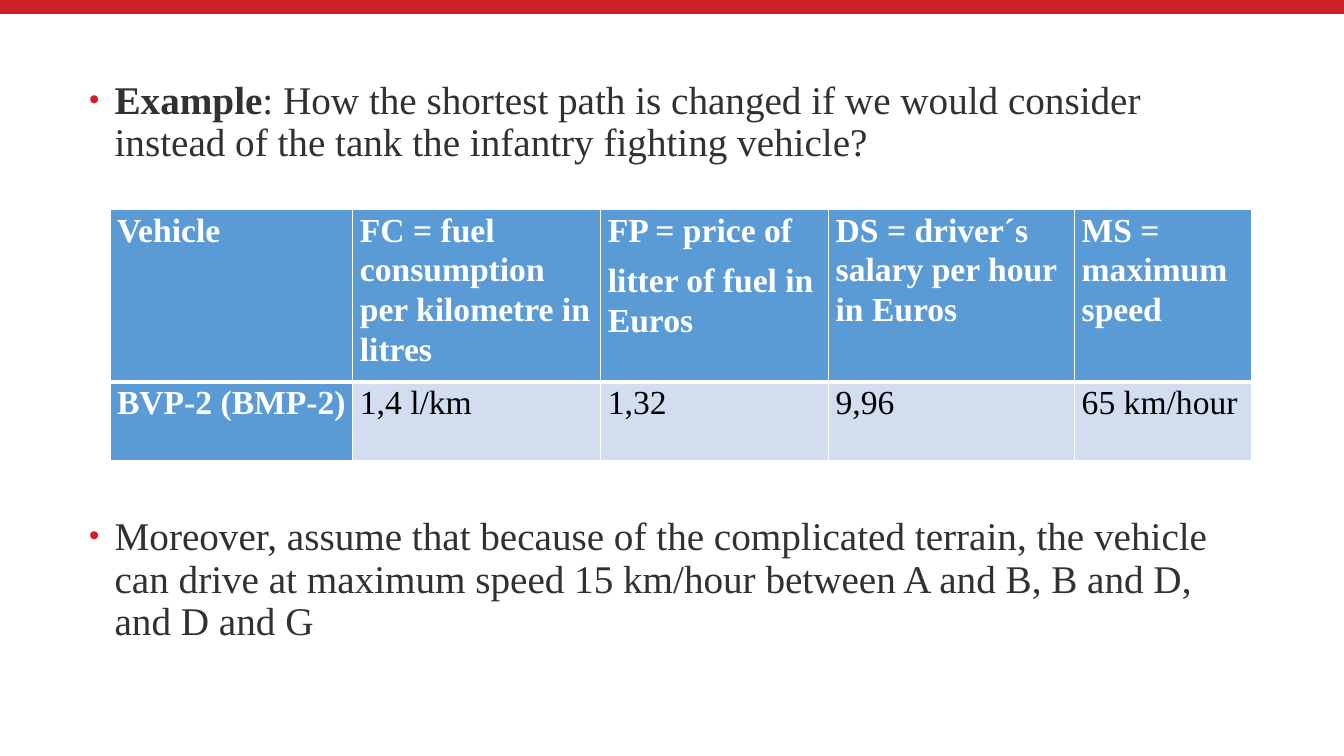
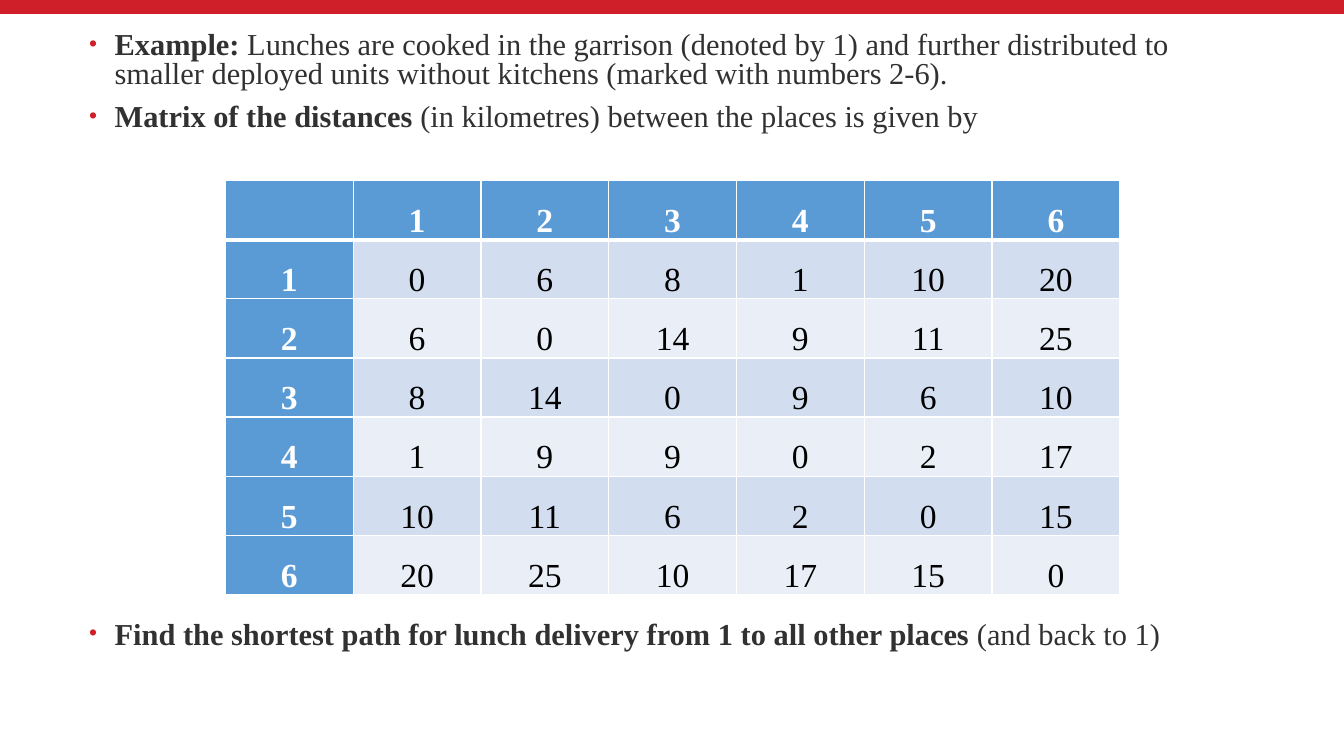
from lxml.etree import SubElement
from pptx import Presentation
from pptx.dml.color import RGBColor
from pptx.enum.shapes import MSO_SHAPE
from pptx.enum.text import MSO_ANCHOR, PP_ALIGN
from pptx.oxml.ns import qn
from pptx.util import Cm, Pt

RED = RGBColor(0xCF, 0x1F, 0x28)
DARK = RGBColor(0x31, 0x31, 0x31)
BLACK = RGBColor(0x00, 0x00, 0x00)
WHITE = RGBColor(0xFF, 0xFF, 0xFF)
BLUE = RGBColor(0x5B, 0x9B, 0xD5)
BAND_FILLS = (RGBColor(0xD2, 0xDE, 0xEF), RGBColor(0xEA, 0xEF, 0xF7))
FONT = "Times New Roman"
BLANK_LAYOUT = 6

VEHICLE_ROWS = [
    [
        "Vehicle",
        "FC = fuel consumption per kilometre in litres",
        "FP = price of\nlitter of fuel in Euros",
        "DS = driver´s salary per hour in Euros",
        "MS = maximum speed",
    ],
    ["BVP-2 (BMP-2)", "1,4 l/km", "1,32", "9,96", "65 km/hour"],
]
DISTANCES = [
    [0, 6, 8, 1, 10, 20],
    [6, 0, 14, 9, 11, 25],
    [8, 14, 0, 9, 6, 10],
    [1, 9, 9, 0, 2, 17],
    [10, 11, 6, 2, 0, 15],
    [20, 25, 10, 17, 15, 0],
]


def style_run(run, size, color, bold):
    run.font.name = FONT
    run.font.size = Pt(size)
    run.font.color.rgb = color
    run.font.bold = bold


def add_top_band(deck, page):
    band = page.shapes.add_shape(MSO_SHAPE.RECTANGLE, 0, 0, deck.slide_width, Cm(0.35))
    band.shadow.inherit = False
    band.fill.solid()
    band.fill.fore_color.rgb = RED
    band.line.fill.background()
    deck.slide_master.shapes.element.insert(2, band.element)


def add_bullet(para):
    properties = para._p.get_or_add_pPr()
    properties.set("marL", str(Cm(0.64)))
    properties.set("indent", str(-Cm(0.64)))
    color = SubElement(properties, qn("a:buClr"))
    SubElement(color, qn("a:srgbClr"), val=str(RED))
    SubElement(properties, qn("a:buSzPct"), val="75000")
    SubElement(properties, qn("a:buFont"), typeface="Arial")
    SubElement(properties, qn("a:buChar"), char="•")


def add_bullets(page, top, height, items, size, line_spacing):
    box = page.shapes.add_textbox(Cm(2), Cm(top), Cm(29.87), Cm(height))
    frame = box.text_frame
    frame.word_wrap = True
    for index, (bold_text, plain_text) in enumerate(items):
        para = frame.add_paragraph() if index else frame.paragraphs[0]
        add_bullet(para)
        para.line_spacing = line_spacing
        if index:
            para.space_before = Pt(10)
        for text, bold in ((bold_text, True), (plain_text, False)):
            if text:
                span = para.add_run()
                span.text = text
                style_run(span, size, DARK, bold)


def set_borders(cell, bottom_width):
    properties = cell._tc.get_or_add_tcPr()
    for side, width in (("L", 1), ("R", 1), ("T", 1), ("B", bottom_width)):
        line = SubElement(properties, qn(f"a:ln{side}"), w=str(Pt(width)))
        fill = SubElement(line, qn("a:solidFill"))
        SubElement(fill, qn("a:srgbClr"), val=str(WHITE))


def fill_cell(cell, text, row, column, margin, anchor, align):
    is_header = row == 0 or column == 0
    set_borders(cell, 3 if row == 0 else 1)
    cell.fill.solid()
    cell.fill.fore_color.rgb = BLUE if is_header else BAND_FILLS[(row - 1) % 2]
    cell.margin_left = cell.margin_right = Cm(margin)
    cell.margin_top = cell.margin_bottom = 0
    cell.vertical_anchor = anchor
    cell.text_frame.text = text
    for para in cell.text_frame.paragraphs:
        para.alignment = align
        para.line_spacing = 1.07
        para.space_after = Pt(8)
        for span in para.runs:
            style_run(span, 24, WHITE if is_header else BLACK, is_header)


def add_grid(page, left, top, widths, heights, rows, margin, anchor, align):
    frame = page.shapes.add_table(
        len(heights), len(widths), Cm(left), Cm(top), Cm(sum(widths)), Cm(sum(heights))
    )
    table = frame.table
    table.first_col = True
    for column, width in zip(table.columns, widths):
        column.width = Cm(width)
    for row, height in zip(table.rows, heights):
        row.height = Cm(height)
    for row, texts in enumerate(rows):
        for column, text in enumerate(texts):
            fill_cell(table.cell(row, column), text, row, column, margin, anchor, align)


def build_vehicle_page(page):
    question = (
        "Example",
        ": How the shortest path is changed if we would consider "
        "instead of the tank the infantry fighting vehicle?",
    )
    assumption = (
        "",
        "Moreover, assume that because of the complicated terrain, the vehicle "
        "can drive at maximum speed 15 km/hour between A and B, B and D, and D and G",
    )
    add_bullets(page, 1.9, 2.5, [question], 28, 0.9)
    add_grid(
        page, 2.77, 5.28, [6.12, 6.25, 5.74, 6.2, 4.47], [3.91, 1.98],
        VEHICLE_ROWS, 0.18, MSO_ANCHOR.TOP, PP_ALIGN.LEFT,
    )
    add_bullets(page, 12.9, 3.5, [assumption], 28, 0.9)


def build_distance_page(page):
    introduction = [
        (
            "Example: ",
            "Lunches are cooked in the garrison (denoted by 1) and further distributed "
            "to smaller deployed units without kitchens (marked with numbers 2-6).",
        ),
        ("Matrix of the distances ", "(in kilometres) between the places is given by"),
    ]
    task = (
        "Find the shortest path for lunch delivery from 1 to all other places ",
        "(and back to 1)",
    )
    places = range(1, len(DISTANCES) + 1)
    rows = [["", *map(str, places)]]
    rows += [[str(place), *map(str, line)] for place, line in zip(places, DISTANCES)]
    add_bullets(page, 0.69, 3, introduction, 21.7, 0.8)
    add_grid(
        page, 5.68, 4.55, [3.22] * len(rows), [1.49] * len(rows),
        rows, 0.13, MSO_ANCHOR.BOTTOM, PP_ALIGN.CENTER,
    )
    add_bullets(page, 15.55, 1.2, [task], 21.7, 0.8)


def main():
    deck = Presentation()
    deck.slide_width, deck.slide_height = Cm(33.87), Cm(19.05)
    layout = deck.slide_layouts[BLANK_LAYOUT]
    vehicle_page = deck.slides.add_slide(layout)
    add_top_band(deck, vehicle_page)
    build_vehicle_page(vehicle_page)
    build_distance_page(deck.slides.add_slide(layout))
    deck.save("out.pptx")


if __name__ == "__main__":
    main()
